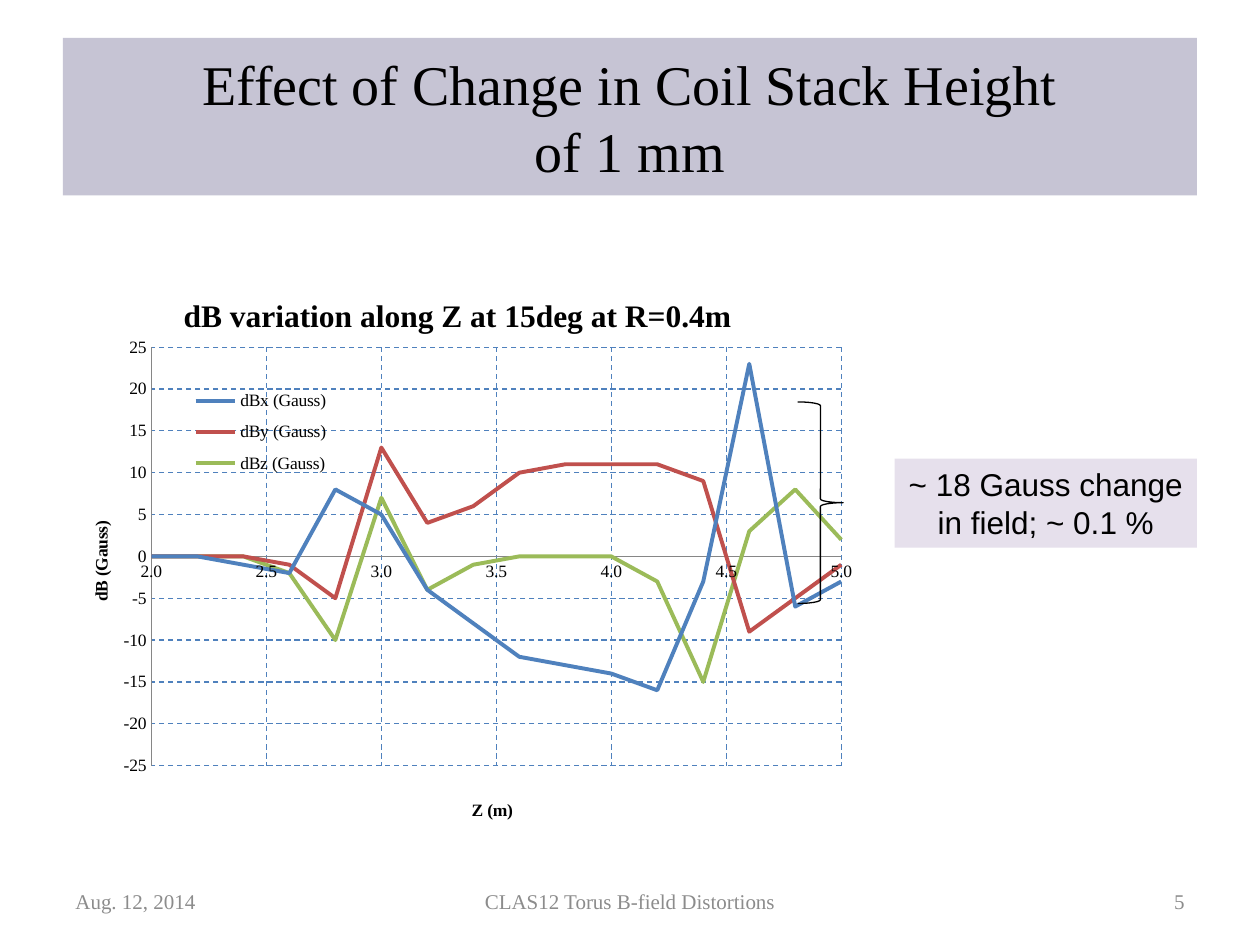
from pptx import Presentation
from pptx.chart.data import XyChartData
from pptx.dml.color import RGBColor
from pptx.enum.chart import XL_CHART_TYPE as ChartType, XL_LEGEND_POSITION as LegendPos
from pptx.enum.chart import XL_TICK_MARK as TickMark
from pptx.enum.dml import MSO_LINE as Dash
from pptx.enum.shapes import MSO_SHAPE as Shape
from pptx.enum.text import MSO_ANCHOR as Anchor, PP_ALIGN as Align
from pptx.oxml import parse_xml
from pptx.oxml.ns import nsdecls, qn
from pptx.util import Pt

BLACK = RGBColor(0x00, 0x00, 0x00)
FOOTER_GRAY = RGBColor(0x8C, 0x8C, 0x8C)
AXIS_GRAY = RGBColor(0x86, 0x86, 0x86)
TITLE_FILL = RGBColor(0xC6, 0xC4, 0xD4)
CALLOUT_FILL = RGBColor(0xE6, 0xE0, 0xEC)
BLUE = RGBColor(0x4F, 0x81, 0xBD)
RED = RGBColor(0xC0, 0x50, 0x4D)
GREEN = RGBColor(0x9B, 0xBB, 0x59)
SERIF, SANS = "Times New Roman", "Arial"

Z_START, Z_STEP = 2, 0.2
FIELDS = [
    ("dBx (Gauss)", BLUE, [0, 0, -1, -2, 8, 5, -4, -8, -12, -13, -14, -16, -3, 23, -6, -3]),
    ("dBy (Gauss)", RED, [0, 0, 0, -1, -5, 13, 4, 6, 10, 11, 11, 11, 9, -9, -5, -1]),
    ("dBz (Gauss)", GREEN, [0, 0, 0, -2, -10, 7, -4, -1, 0, 0, 0, -3, -15, 3, 8, 2]),
]


def style_font(font, size, face=SERIF, color=BLACK, bold=False):
    font.size, font.name, font.bold = Pt(size), face, bold
    font.color.rgb = color


def write(frame, text, size, face=SERIF, color=BLACK, align=Align.CENTER):
    frame.text = text
    frame.word_wrap = True
    frame.vertical_anchor = Anchor.MIDDLE
    for paragraph in frame.paragraphs:
        paragraph.alignment = align
        for run in paragraph.runs:
            style_font(run.font, size, face, color)


def add_panel(slide, box, fill, text, size, face):
    panel = slide.shapes.add_shape(Shape.RECTANGLE, *map(Pt, box))
    panel.shadow.inherit = False
    panel.fill.solid()
    panel.fill.fore_color.rgb = fill
    panel.line.fill.background()
    write(panel.text_frame, text, size, face)


def add_footer(slide, box):
    left, top, width, height = box
    parts = [
        ("Aug. 12, 2014", 0, 168, Align.LEFT),
        ("CLAS12 Torus B-field Distortions", 210, 228, Align.CENTER),
        ("5", width - 168, 168, Align.RIGHT),
    ]
    for text, offset, part_width, align in parts:
        part = slide.shapes.add_textbox(Pt(left + offset), Pt(top), Pt(part_width), Pt(height))
        write(part.text_frame, text, 12, color=FOOTER_GRAY, align=align)


def set_layout(element, index, inner=False, **fractions):
    """Place a chart part by fractions of the chart's size."""
    for old in element.findall(qn("c:layout")):
        element.remove(old)
    target = '<c:layoutTarget val="inner"/>' if inner else ""
    modes = "".join(f'<c:{key}Mode val="edge"/>' for key in "xy")
    values = "".join(f'<c:{key} val="{value}"/>' for key, value in fractions.items())
    element.insert(index, parse_xml(
        f'<c:layout {nsdecls("c")}><c:manualLayout>{target}{modes}{values}'
        "</c:manualLayout></c:layout>"))


def set_title(title, text, size, x, y):
    title.text_frame.text = text
    style_font(title.text_frame.paragraphs[0].runs[0].font, size, bold=True)
    set_layout(title._element, 1, x=x, y=y)


def style_axis(axis, low, high, step, number_format):
    axis.minimum_scale, axis.maximum_scale, axis.major_unit = low, high, step
    axis.major_tick_mark = axis.minor_tick_mark = TickMark.NONE
    axis.tick_labels.number_format = number_format
    axis.tick_labels.number_format_is_linked = False
    axis.format.line.color.rgb = AXIS_GRAY
    axis.format.line.width = Pt(0.75)
    axis.has_major_gridlines = True
    grid = axis.major_gridlines.format.line
    grid.color.rgb, grid.width, grid.dash_style = BLUE, Pt(0.75), Dash.DASH


def add_field_chart(slide, box):
    data = XyChartData()
    for name, _, values in FIELDS:
        curve = data.add_series(name)
        for i, value in enumerate(values):
            curve.add_data_point(round(Z_START + i * Z_STEP, 1), value)
    chart = slide.shapes.add_chart(
        ChartType.XY_SCATTER_SMOOTH_NO_MARKERS, *map(Pt, box), data).chart
    style_font(chart.font, 10)
    plot = chart.plots[0]
    plot.vary_by_categories = False
    for curve, (_, color, _) in zip(plot.series, FIELDS):
        curve.smooth = True
        curve.format.line.color.rgb = color
        curve.format.line.width = Pt(2.25)
    set_layout(chart._chartSpace.chart.plotArea, 0, inner=True, x=0.138, y=0.142, w=0.831, h=0.755)

    # Axes and titles
    z_axis, field_axis = chart.category_axis, chart.value_axis
    style_axis(z_axis, 2, 5, 0.5, "0.0")
    style_axis(field_axis, -25, 25, 5, "0")
    chart.has_title = True
    set_title(chart.chart_title, "dB variation along Z at 15deg at R=0.4m", 18, 0.17, 0.04)
    set_title(z_axis.axis_title, "Z (m)", 10, 0.52, 0.95)
    set_title(field_axis.axis_title, "dB (Gauss)", 10, 0.06, 0.45)
    turned = field_axis.axis_title.text_frame._element.find(qn("a:bodyPr"))
    turned.set("rot", "-5400000")
    turned.set("vert", "horz")

    # Legend inside the plot
    chart.has_legend = True
    chart.legend.position = LegendPos.RIGHT
    chart.legend.include_in_layout = False
    style_font(chart.legend.font, 10)
    set_layout(chart.legend._element, 1, x=0.18, y=0.2, w=0.18, h=0.19)


def add_brace(slide, box):
    brace = slide.shapes.add_shape(Shape.RIGHT_BRACE, *map(Pt, box))
    brace.shadow.inherit = False
    brace.fill.background()
    brace.line.color.rgb = BLACK
    brace.line.width = Pt(0.75)


def main():
    deck = Presentation()
    deck.slide_width, deck.slide_height = Pt(720), Pt(540)
    slide = deck.slides.add_slide(deck.slide_layouts[6])
    add_panel(slide, (36, 21.6, 648, 90), TITLE_FILL,
              "Effect of Change in Coil Stack Height\vof 1 mm", 32, SERIF)
    add_footer(slide, (36, 500.5, 648, 28.8))
    add_field_chart(slide, (21, 153.4, 474.5, 318.2))
    add_brace(slide, (455.8, 229.7, 26, 115.2))
    add_panel(slide, (511.2, 262, 172.8, 51), CALLOUT_FILL,
              "~ 18 Gauss change\nin field; ~ 0.1 %", 18, SANS)
    deck.save("out.pptx")


if __name__ == "__main__":
    main()
